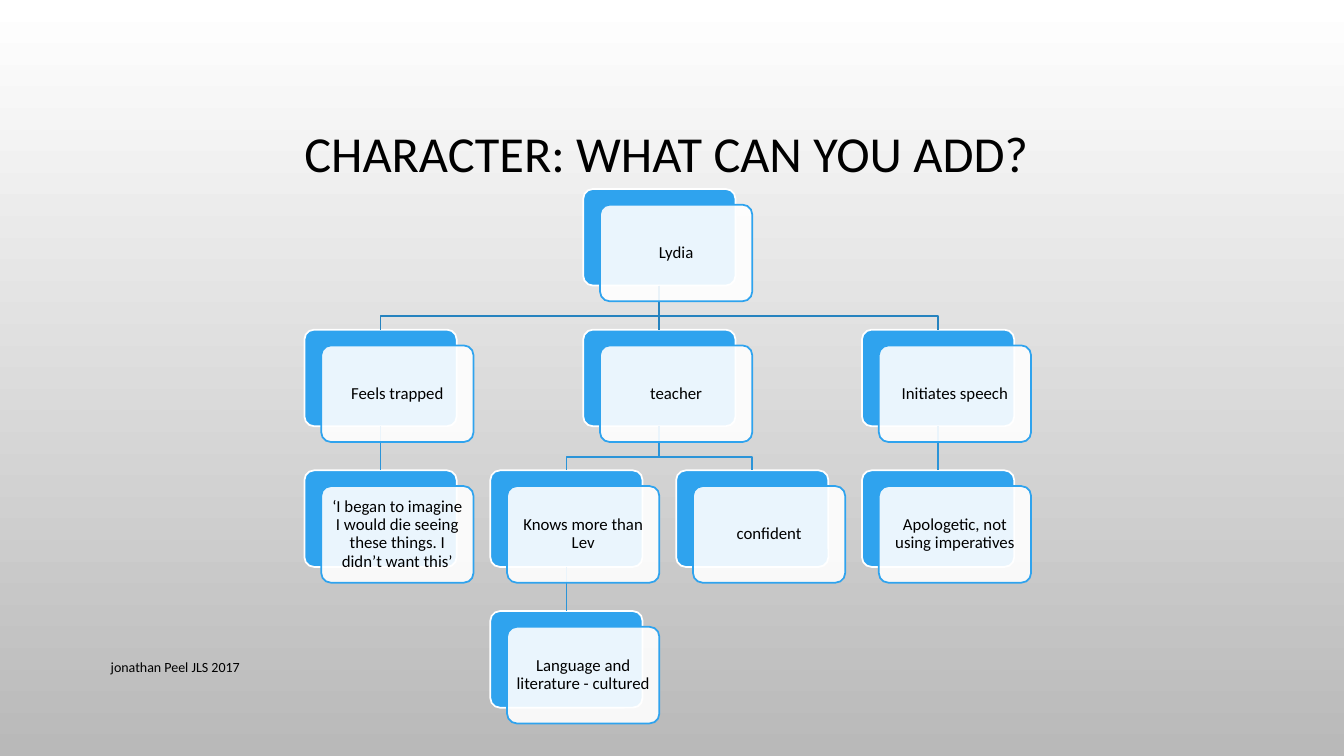
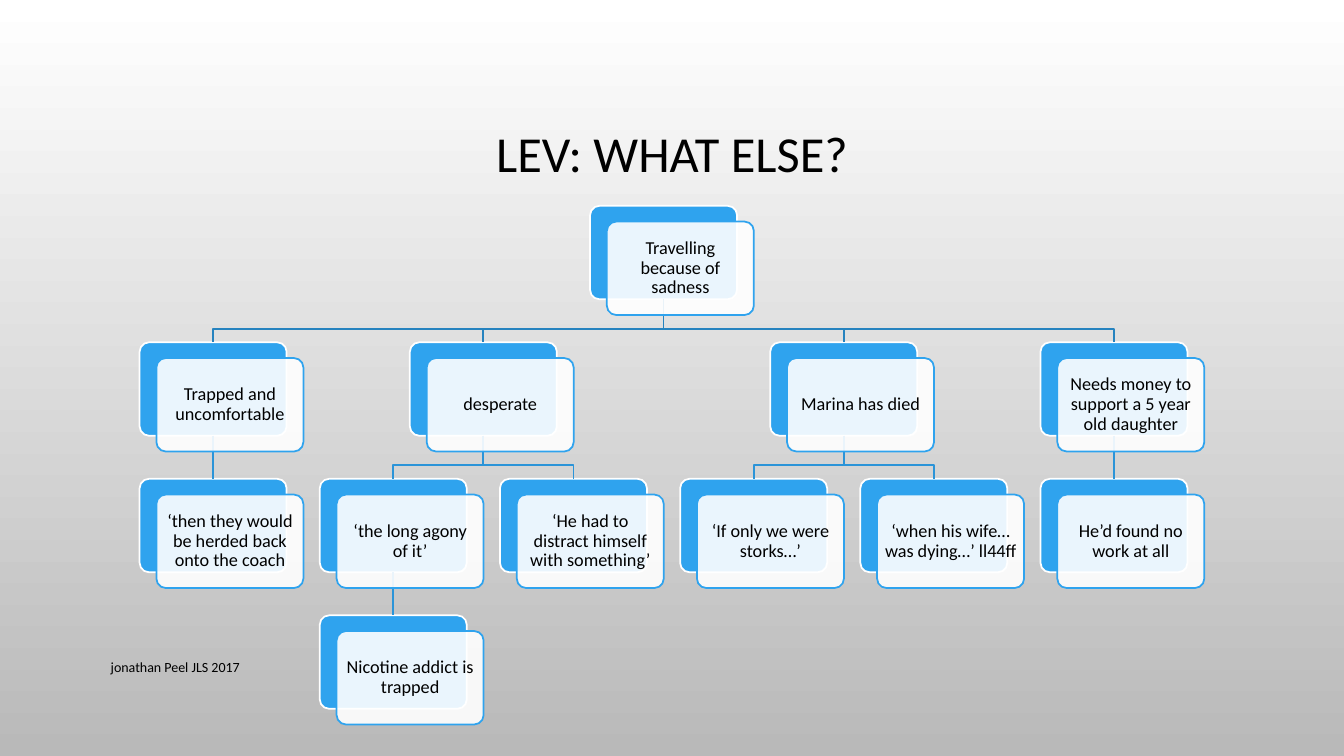
from dataclasses import dataclass, field

from lxml.etree import SubElement
from pptx import Presentation
from pptx.dml.color import RGBColor
from pptx.enum.shapes import MSO_CONNECTOR, MSO_SHAPE
from pptx.enum.text import MSO_ANCHOR, PP_ALIGN
from pptx.oxml.ns import qn
from pptx.util import Pt


@dataclass(frozen=True)
class Theme:
    """Colours, font and type sizes."""
    font: str = "Calibri"
    ink: str = "000000"
    paper: str = "FFFFFF"
    shade: str = "B9B9B9"
    blue: str = "2FA3EE"
    trunk: str = "2683BF"
    branch: str = "2B94D8"
    line: float = 1.25
    title: int = 36
    foot: int = 10
    alpha: int = 90


@dataclass
class Node:
    """A card in the tree with its children and its place in the grid."""
    text: str
    kids: list = field(default_factory=list)
    col: float = 0
    row: int = 0
    back: object = None


@dataclass(frozen=True)
class Grid:
    """Where the cards stand and how large they are, in px."""
    left: int
    last: int
    top: int
    pitch: int
    wide: int
    high: int
    size: int


def px(num):
    """Turn px into EMU."""
    return round(num * 9525)


def rgb(code):
    """Turn a hex code into a colour."""
    return RGBColor.from_string(code)


def walk(node):
    """List a node and all below it."""
    return [node] + [sub for kid in node.kids for sub in walk(kid)]


def place(node, row=0, used=0):
    """Set leaves side by side and parents above the middle of their children."""
    node.row = row
    if not node.kids:
        node.col = used
        return used + 1
    for kid in node.kids:
        used = place(kid, row + 1, used)
    node.col = (node.kids[0].col + node.kids[-1].col) / 2
    return used


class Deck:
    """Holds the style and the current slide."""

    def __init__(self, theme):
        """Set the slide size and the shared background."""
        self.theme = theme
        self.prs = Presentation()
        self.prs.slide_width, self.prs.slide_height = px(1280), px(720)
        fill = self.prs.slide_master.background.fill
        fill.gradient()
        fill.gradient_angle = 270
        for stop, code in zip(fill.gradient_stops, (theme.paper, theme.shade)):
            stop.color.rgb = rgb(code)

    def slide(self, title):
        """Start a slide with its title and footer."""
        self.page = self.prs.slides.add_slide(self.prs.slide_layouts[6])
        self.label(title, (96, 65, 1088, 168), self.theme.title, PP_ALIGN.CENTER)
        self.label("jonathan Peel JLS 2017", (96, 617, 701, 38), self.theme.foot, PP_ALIGN.LEFT)

    def words(self, shape, text, size, align):
        """Put one styled run into a shape."""
        frame = shape.text_frame
        frame.word_wrap = True
        frame.vertical_anchor = MSO_ANCHOR.MIDDLE
        para = frame.paragraphs[0]
        para.alignment = align
        para.line_spacing = 0.9
        run = para.add_run()
        run.text = text
        run.font.name, run.font.size = self.theme.font, Pt(size)
        run.font.color.rgb = rgb(self.theme.ink)
        return frame

    def label(self, text, rect, size, align):
        """Add a text box."""
        box = self.page.shapes.add_textbox(*map(px, rect))
        self.words(box, text, size, align)

    def stroke(self, shape, code):
        """Set the line of a shape."""
        shape.line.color.rgb = rgb(code)
        shape.line.width = Pt(self.theme.line)

    def card(self, rect, fill, line):
        """Add a rounded card."""
        card = self.page.shapes.add_shape(MSO_SHAPE.ROUNDED_RECTANGLE, *map(px, rect))
        card.adjustments[0] = 0.1
        card.shadow.inherit = False
        card.fill.solid()
        card.fill.fore_color.rgb = rgb(fill)
        self.stroke(card, line)
        return card

    def front(self, text, rect, size):
        """Add a see-through card with text."""
        card = self.card(rect, self.theme.paper, self.theme.blue)
        tint = card.element.spPr.find(qn("a:solidFill"))[0]
        SubElement(tint, qn("a:alpha"), val=str(self.theme.alpha * 1000))
        frame = self.words(card, text, size, PP_ALIGN.CENTER)
        frame.margin_left = frame.margin_right = px(5)
        frame.margin_top = frame.margin_bottom = px(5)

    def link(self, node, kid):
        """Join a card to a child, straight or with a bend."""
        code = self.theme.branch if node.row else self.theme.trunk
        head, tail = node.back, kid.back
        start = head.left + head.width // 2, head.top + head.height
        end = tail.left + tail.width // 2, tail.top
        if node.col == kid.col:
            line = self.page.shapes.add_connector(MSO_CONNECTOR.STRAIGHT, *start, *end)
            line.begin_connect(head, 2)
            line.end_connect(tail, 0)
            self.stroke(line, code)
            SubElement(line.element.spPr, qn("a:effectLst"))
            return
        bend = end[1] - px(13)
        pen = self.page.shapes.build_freeform(*start)
        pen.add_line_segments([(start[0], bend), (end[0], bend), end], close=False)
        line = pen.convert_to_shape()
        line.shadow.inherit = False
        line.fill.background()
        self.stroke(line, code)

    def tree(self, root, grid):
        """Draw a tree of cards."""
        step = (grid.last - grid.left) / (place(root) - 1)
        nodes = walk(root)

        def rect(node, dx=0, dy=0):
            """Find the frame of a card."""
            left = grid.left + node.col * step + dx
            return left, grid.top + node.row * grid.pitch + dy, grid.wide, grid.high

        for node in nodes:
            node.back = self.card(rect(node), self.theme.blue, self.theme.paper)
        for node in nodes:
            for kid in node.kids:
                self.link(node, kid)
        for node in nodes:
            self.front(node.text, rect(node, 16, 15), grid.size)


def main():
    """Build the two trees."""
    deck = Deck(Theme())
    deck.slide("CHARACTER: WHAT CAN YOU ADD? ")
    lydia = Node("Lydia", [
        Node("Feels trapped", [
            Node("‘I began to imagine I would die seeing these things. I didn’t want this’")]),
        Node("teacher", [
            Node("Knows more than Lev", [Node("Language and literature - cultured")]),
            Node("confident")]),
        Node("Initiates speech", [Node("Apologetic, not using imperatives")]),
    ])
    deck.tree(lydia, Grid(290, 821, 180, 134, 145, 92, 12))

    deck.slide("LEV: WHAT ELSE?")
    lev = Node("Travelling because of sadness", [
        Node("Trapped and uncomfortable", [
            Node("‘then they would be herded back onto the coach")]),
        Node("desperate", [
            Node("‘the long agony of it’", [Node("Nicotine addict is trapped")]),
            Node("‘He had to distract himself with something’")]),
        Node("Marina has died", [
            Node("‘If only we were storks…’"),
            Node("‘when his wife… was dying…’ ll44ff")]),
        Node("Needs money to support a 5 year old daughter", [
            Node("He’d found no work at all")]),
    ])
    deck.tree(lev, Grid(133, 991, 196, 130, 140, 89, 13))
    deck.prs.save("out.pptx")


if __name__ == "__main__":
    main()
